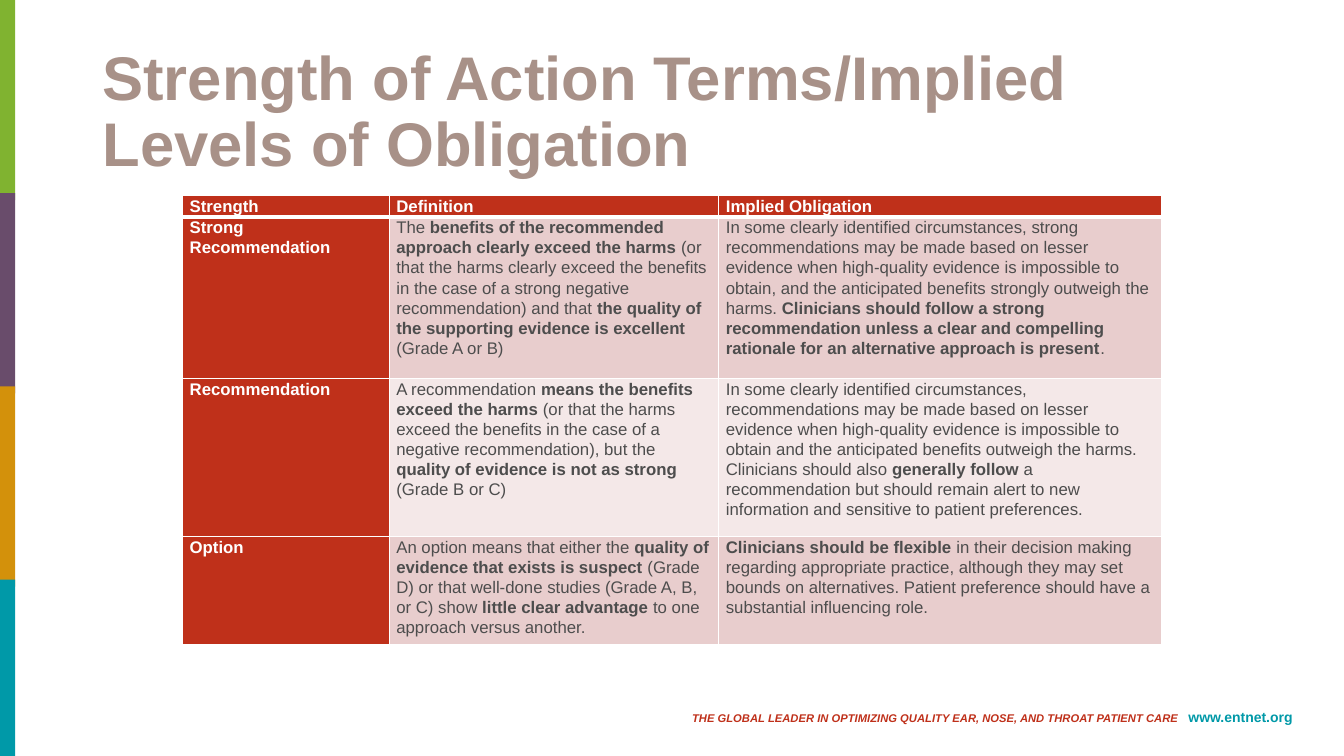
"""Build the slide on strength of action terms and implied levels of obligation."""
from lxml import etree
from pptx import Presentation
from pptx.dml.color import RGBColor
from pptx.enum.shapes import MSO_SHAPE
from pptx.enum.text import MSO_ANCHOR, PP_ALIGN
from pptx.oxml.ns import qn
from pptx.util import Pt

RECTANGLE = MSO_SHAPE.RECTANGLE
MIDDLE = MSO_ANCHOR.MIDDLE
LEFT, RIGHT = PP_ALIGN.LEFT, PP_ALIGN.RIGHT

FONT = "Arial"
RED, TEAL, TAUPE, GRAY, WHITE = "BF301A", "0099A8", "A89188", "4D4D4D", "FFFFFF"
BAND_COLORS = ["E8CDCD", "F4E8E8"]
STRIPE_COLORS = ["80B330", "694C6B", "D3910B", TEAL]

TITLE = "Strength of Action Terms/Implied Levels of Obligation"
TAGLINE = "THE GLOBAL LEADER IN OPTIMIZING QUALITY EAR, NOSE, AND THROAT PATIENT CARE"
WEBSITE = "www.entnet.org"
BOLD_MARK = "**"
TERMS = [
    ("**Strength**", "**Definition**", "**Implied Obligation**"),
    (
        "**Strong Recommendation**",
        "The **benefits of the recommended approach clearly exceed the harms **(or that the "
        "harms clearly exceed the benefits in the case of a strong negative recommendation) "
        "and that **the quality of the supporting evidence is excellent **(Grade A or B)",
        "In some clearly identified circumstances, strong recommendations may be made based on "
        "lesser evidence when high-quality evidence is impossible to obtain, and the "
        "anticipated benefits strongly outweigh the harms. **Clinicians should follow a strong "
        "recommendation unless a clear and compelling rationale for an alternative approach "
        "is present**.",
    ),
    (
        "**Recommendation**",
        "A recommendation **means the benefits exceed the harms **(or that the harms exceed "
        "the benefits in the case of a negative recommendation), but the** quality of evidence "
        "is not as strong **(Grade B or C)",
        "In some clearly identified circumstances, recommendations may be made based on lesser "
        "evidence when high-quality evidence is impossible to obtain and the anticipated "
        "benefits outweigh the harms. Clinicians should also **generally follow **a "
        "recommendation but should remain alert to new information and sensitive to patient "
        "preferences.",
    ),
    (
        "**Option**",
        "An option means that either the **quality of evidence that exists is suspect** "
        "(Grade D) or that well-done studies (Grade A, B, or C) show **little clear advantage "
        "**to one approach versus another.",
        "**Clinicians should be flexible **in their decision making regarding appropriate "
        "practice, although they may set bounds on alternatives. Patient preference should "
        "have a substantial influencing role.",
    ),
]

SLIDE_WIDTH, SLIDE_HEIGHT = 960, 540
STRIPE_WIDTH, STRIPE_STEP, STRIPE_OVERLAP = 10.8, 138, 5
TABLE_LEFT, TABLE_TOP = 130.5, 139.7
COLUMN_WIDTHS = [147.6, 235.4, 316]
ROW_HEIGHTS = [15.3, 115.2, 113.2, 72.7]
CELL_INSET = 5
RULE, HEADER_RULE = 1, 3


def color(code):
    return RGBColor.from_string(code)


def add_run(paragraph, text, size, code, bold=True, italic=False):
    run = paragraph.add_run()
    run.text = text
    run.font.name, run.font.size = FONT, Pt(size)
    run.font.bold, run.font.italic = bold, italic
    run.font.color.rgb = color(code)
    return run


def add_stripes(slide):
    for index, code in enumerate(STRIPE_COLORS):
        top = index * STRIPE_STEP
        height = min(STRIPE_STEP + STRIPE_OVERLAP, SLIDE_HEIGHT - top)
        stripe = slide.shapes.add_shape(RECTANGLE, 0, Pt(top), Pt(STRIPE_WIDTH), Pt(height))
        stripe.shadow.inherit = False
        stripe.fill.solid()
        stripe.fill.fore_color.rgb = color(code)
        stripe.line.fill.background()


def add_title(slide):
    title = slide.shapes.title
    title.left, title.top, title.width, title.height = Pt(66), Pt(28.8), Pt(828), Pt(104.4)
    title.text_frame.vertical_anchor = MIDDLE
    title.text_frame.word_wrap = True
    heading = title.text_frame.paragraphs[0]
    heading.alignment, heading.line_spacing = LEFT, 0.9
    add_run(heading, TITLE, 44, TAUPE)


def set_borders(cell, widths):
    properties = cell._tc.get_or_add_tcPr()
    for index, (side, width) in enumerate(widths.items()):
        border = etree.Element(qn(f"a:ln{side}"), w=str(Pt(width)))
        fill = etree.SubElement(border, qn("a:solidFill"))
        etree.SubElement(fill, qn("a:srgbClr"), val=WHITE)
        properties.insert(index, border)


def fill_cell(cell, text, row, column):
    is_heading = row == 0 or column == 0
    cell.margin_left = cell.margin_right = Pt(CELL_INSET)
    cell.margin_top = cell.margin_bottom = 0
    cell.fill.solid()
    cell.fill.fore_color.rgb = color(RED if is_heading else BAND_COLORS[(row - 1) % 2])
    paragraph = cell.text_frame.paragraphs[0]
    paragraph.line_spacing = 1.07
    for index, part in enumerate(text.split(BOLD_MARK)):
        if part:
            add_run(paragraph, part, 12, WHITE if is_heading else GRAY, bold=index % 2 == 1)
    top = HEADER_RULE if row == 1 else RULE
    bottom = HEADER_RULE if row == 0 else RULE
    set_borders(cell, {"L": RULE, "R": RULE, "T": top, "B": bottom})


def add_terms(slide):
    terms = slide.shapes.add_table(
        len(TERMS), len(COLUMN_WIDTHS), Pt(TABLE_LEFT), Pt(TABLE_TOP),
        Pt(sum(COLUMN_WIDTHS)), Pt(sum(ROW_HEIGHTS)),
    ).table
    for column, width in zip(terms.columns, COLUMN_WIDTHS):
        column.width = Pt(width)
    for row, height in zip(terms.rows, ROW_HEIGHTS):
        row.height = Pt(height)
    for row, texts in enumerate(TERMS):
        for column, text in enumerate(texts):
            fill_cell(terms.cell(row, column), text, row, column)


def add_footer(slide):
    footer = slide.shapes.add_textbox(Pt(376.6), Pt(502.6), Pt(553.7), Pt(19.4))
    footer.text_frame.word_wrap = True
    line = footer.text_frame.paragraphs[0]
    line.alignment = RIGHT
    add_run(line, TAGLINE, 8, RED, italic=True)
    gap = add_run(line, " ", 8, RED)
    gap.font._element.set("spc", "450")
    add_run(line, WEBSITE, 10, TEAL)


def main():
    deck = Presentation()
    deck.slide_width, deck.slide_height = Pt(SLIDE_WIDTH), Pt(SLIDE_HEIGHT)
    slide = deck.slides.add_slide(deck.slide_layouts.get_by_name("Title Only"))
    add_footer(slide)
    add_stripes(slide)
    add_title(slide)
    add_terms(slide)
    deck.save("out.pptx")


if __name__ == "__main__":
    main()
